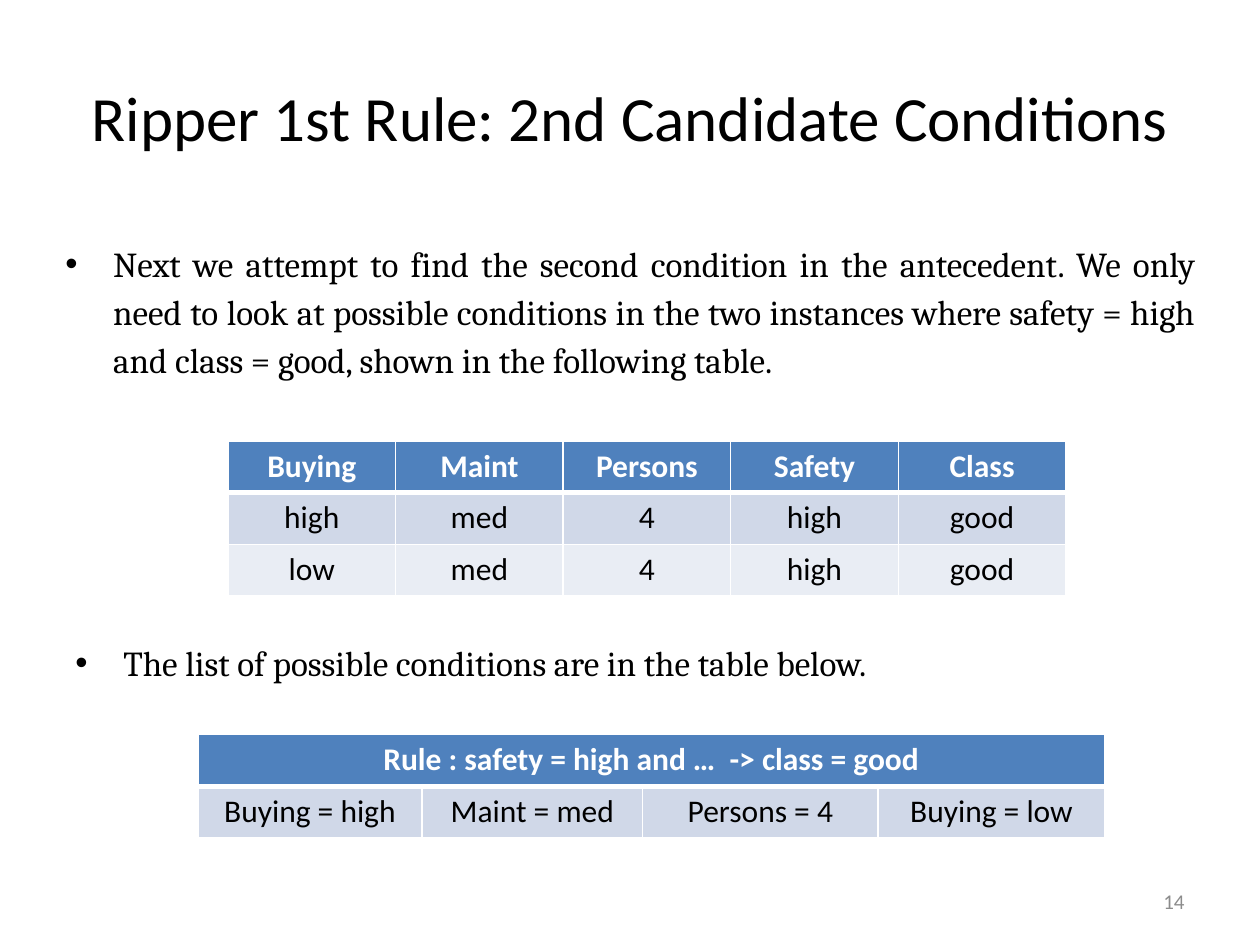
from dataclasses import dataclass

from lxml import etree
from pptx import Presentation
from pptx.dml.color import RGBColor
from pptx.enum.text import MSO_ANCHOR, PP_ALIGN
from pptx.oxml.ns import qn
from pptx.util import Inches, Pt

LEFT, CENTER, RIGHT, JUSTIFY = (
    PP_ALIGN.LEFT, PP_ALIGN.CENTER, PP_ALIGN.RIGHT, PP_ALIGN.JUSTIFY)
TOP, MIDDLE = MSO_ANCHOR.TOP, MSO_ANCHOR.MIDDLE
TITLE_ONLY = 5


@dataclass(frozen=True)
class Theme:
    heading_font: str = "Calibri"
    body_font: str = "Cambria"
    text: str = "000000"
    light: str = "FFFFFF"
    muted: str = "8C8C8C"
    header: str = "4F81BD"
    bands: tuple = ("D0D8E8", "E9EDF4")
    title_size: int = 36
    body_size: int = 20
    table_size: int = 18
    number_size: int = 12
    rule: int = 1
    header_rule: int = 3
    indent: float = 0.38
    row_height: float = 0.41


class SlideBuilder:
    """Adds elements to one slide in the style of one theme."""

    def __init__(self, prs, theme):
        self.theme = theme
        self.slide = prs.slides.add_slide(prs.slide_layouts[TITLE_ONLY])

    def format_text(self, tf, size, font, color, align, bold=False):
        for p in tf.paragraphs:
            p.alignment = align
            for r in p.runs:
                r.font.size = Pt(size)
                r.font.name = font
                r.font.bold = bold
                r.font.color.rgb = RGBColor.from_string(color)

    def title(self, text, left, top, width, height):
        t = self.theme
        s = self.slide.shapes.title
        s.left, s.top = Inches(left), Inches(top)
        s.width, s.height = Inches(width), Inches(height)
        tf = s.text_frame
        tf.text = text
        tf.vertical_anchor = MIDDLE
        self.format_text(tf, t.title_size, t.heading_font, t.text, CENTER)

    def text_box(self, text, left, top, width, height, anchor=TOP):
        s = self.slide.shapes.add_textbox(
            Inches(left), Inches(top), Inches(width), Inches(height))
        tf = s.text_frame
        tf.word_wrap = True
        tf.vertical_anchor = anchor
        tf.text = text
        return tf

    def bullet(self, text, left, top, width, height, align=LEFT, spacing=1.0):
        t = self.theme
        tf = self.text_box(text, left, top, width, height)
        self.format_text(tf, t.body_size, t.body_font, t.text, align)
        p = tf.paragraphs[0]
        p.line_spacing = spacing
        pPr = p._p.get_or_add_pPr()
        pPr.set("marL", str(Inches(t.indent)))
        pPr.set("indent", str(-Inches(t.indent)))
        etree.SubElement(pPr, qn("a:buFont"), typeface="Arial")
        etree.SubElement(pPr, qn("a:buChar"), char="•")

    def page_number(self, text, left, top, width, height):
        t = self.theme
        tf = self.text_box(text, left, top, width, height, MIDDLE)
        self.format_text(tf, t.number_size, t.heading_font, t.muted, RIGHT)

    def borders(self, cell, top, bottom):
        """Draw the cell's rules; top and bottom are widths in points."""
        t = self.theme
        tcPr = cell._tc.get_or_add_tcPr()
        sides = (("L", t.rule), ("R", t.rule), ("T", top), ("B", bottom))
        for i, (side, width) in enumerate(sides):
            ln = etree.Element(qn(f"a:ln{side}"), w=str(Pt(width)))
            fill = etree.SubElement(ln, qn("a:solidFill"))
            etree.SubElement(fill, qn("a:srgbClr"), val=t.light)
            tcPr.insert(i, ln)

    def table(self, rows, left, top, widths):
        """Add a table; a first row of one cell spans all columns."""
        t = self.theme
        s = self.slide.shapes.add_table(
            len(rows), len(widths), Inches(left), Inches(top),
            Inches(sum(widths)), Inches(t.row_height * len(rows)))
        table = s.table
        for column, width in zip(table.columns, widths):
            column.width = Inches(width)
        for i, row in enumerate(rows):
            is_header = i == 0
            table.rows[i].height = Inches(t.row_height)
            fill = t.header if is_header else t.bands[(i - 1) % len(t.bands)]
            color = t.light if is_header else t.text
            for j in range(len(widths)):
                cell = table.cell(i, j)
                cell.fill.solid()
                cell.fill.fore_color.rgb = RGBColor.from_string(fill)
                self.borders(cell,
                             top=t.header_rule if i == 1 else t.rule,
                             bottom=t.header_rule if is_header else t.rule)
                if j < len(row):
                    cell.text_frame.text = row[j]
                    self.format_text(cell.text_frame, t.table_size,
                                     t.heading_font, color, CENTER, is_header)
        if len(rows[0]) == 1:
            table.cell(0, 0).merge(table.cell(0, len(widths) - 1))


def main():
    prs = Presentation()
    prs.slide_width, prs.slide_height = Inches(10), Inches(7.5)
    b = SlideBuilder(prs, Theme())

    b.title("Ripper 1st Rule: 2nd Candidate Conditions", 0.5, 0.3, 9, 1.25)
    b.bullet(
        "Next we attempt to find the second condition in the antecedent. "
        "We only need to look at possible conditions in the two instances "
        "where safety = high and class = good, shown in the following table.",
        0.42, 1.83, 9.17, 1.24, align=JUSTIFY, spacing=1.14)
    instances = [
        ["Buying", "Maint", "Persons", "Safety", "Class"],
        ["high", "med", "4", "high", "good"],
        ["low", "med", "4", "high", "good"],
    ]
    b.table(instances, 1.81, 3.5, [1.33] * 5)
    conditions = [
        ["Rule : safety = high and …  -> class = good"],
        ["Buying = high", "Maint = med", "Persons = 4", "Buying = low"],
    ]
    b.table(conditions, 1.57, 5.83, [1.78, 1.75, 1.87, 1.8])
    b.bullet("The list of possible conditions are in the table below.",
             0.5, 5.04, 9.71, 0.44)
    b.page_number("14", 7.17, 6.95, 2.33, 0.4)

    prs.save("out.pptx")


if __name__ == "__main__":
    main()
